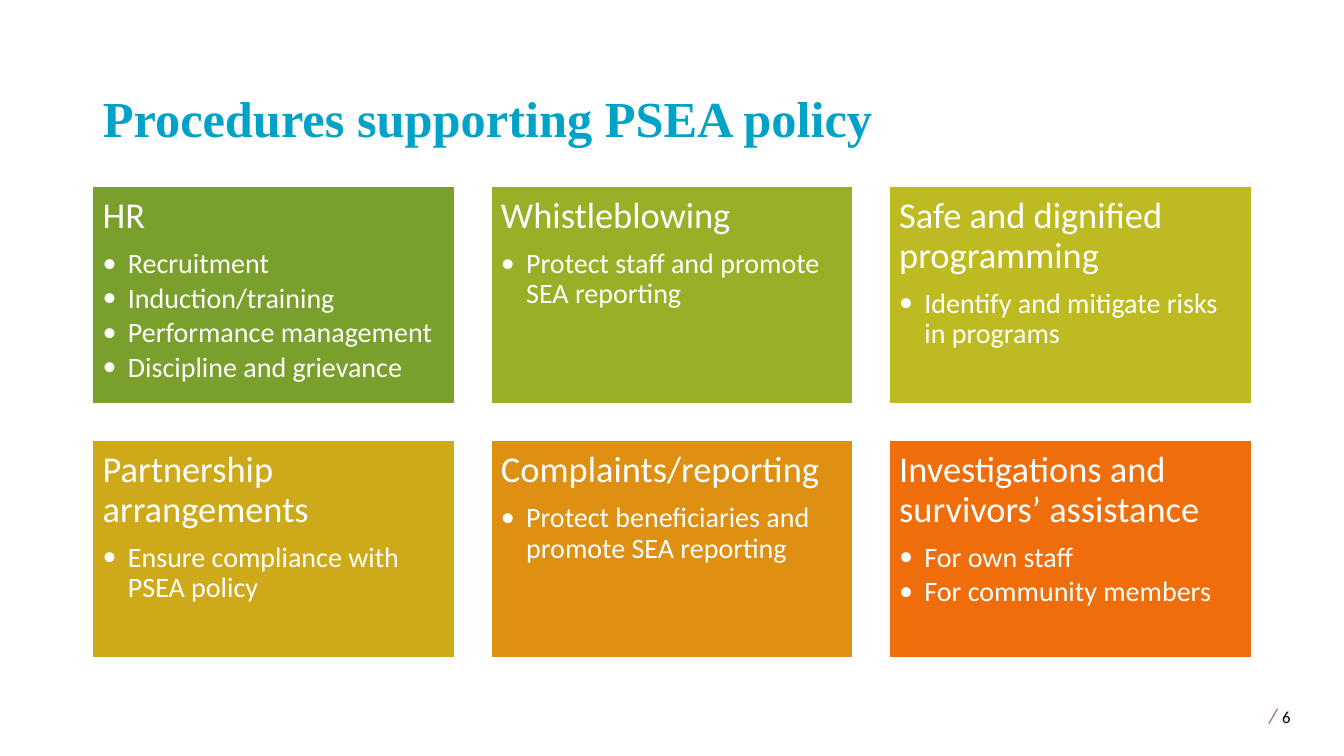
from lxml import etree
from pptx import Presentation
from pptx.dml.color import RGBColor
from pptx.enum.shapes import MSO_SHAPE
from pptx.enum.text import MSO_ANCHOR, MSO_AUTO_SIZE, PP_ALIGN
from pptx.oxml.ns import qn
from pptx.util import Inches, Pt

RECT = MSO_SHAPE.RECTANGLE
TOP, BOTTOM = MSO_ANCHOR.TOP, MSO_ANCHOR.BOTTOM
LEFT = PP_ALIGN.LEFT
NO_FIT = MSO_AUTO_SIZE.NONE

WHITE = RGBColor(0xFF, 0xFF, 0xFF)
BLACK = RGBColor(0, 0, 0)
TEAL = RGBColor(0x00, 0xA2, 0xC7)
PURPLE = RGBColor(0x90, 0x53, 0xA1)

TITLE = "Procedures supporting PSEA policy"
CARDS = [
    ("HR", RGBColor(0x79, 0xA0, 0x2C),
     ["Recruitment", "Induction/training", "Performance management",
      "Discipline and grievance"]),
    ("Whistleblowing", RGBColor(0x99, 0xAF, 0x27),
     ["Protect staff and promote SEA reporting"]),
    ("Safe and dignified programming", RGBColor(0xBE, 0xBA, 0x21),
     ["Identify and mitigate risks in programs"]),
    ("Partnership arrangements", RGBColor(0xCE, 0xA9, 0x1A),
     ["Ensure compliance with PSEA policy"]),
    ("Complaints/reporting", RGBColor(0xDE, 0x90, 0x13),
     ["Protect beneficiaries and promote SEA reporting"]),
    ("Investigations and survivors’ assistance", RGBColor(0xEF, 0x6E, 0x0B),
     ["For own staff", "For community members"]),
]
FOOTER = [("/ ", 15, PURPLE, True), ("6", 12, BLACK, False)]

WIDTH, HEIGHT = 13.33, 7.5
COLS = 3
MARGIN, CARD_TOP = 0.92, 1.85
CARD_W, CARD_H, GAP = 3.59, 2.16, 0.36
GRID_W = WIDTH - 2 * MARGIN
STEP_X = (GRID_W - CARD_W) / (COLS - 1)
STEP_Y = CARD_H + GAP
SIDE, INSET = Inches(0.1), Inches(0.11)
INDENT = Inches(0.25)


def box(*sides):
    return [Inches(side) for side in sides]


def add_run(para, text, size, color, font="Calibri", bold=False, italic=False):
    run = para.add_run()
    run.text = text
    face = run.font
    face.name, face.size = font, Pt(size)
    face.bold, face.italic = bold, italic
    face.color.rgb = color


def set_bullet(para):
    props = para._p.get_or_add_pPr()
    props.set("marL", str(INDENT))
    props.set("indent", str(-INDENT))
    etree.SubElement(props, qn("a:buFont")).set("typeface", "Calibri")
    etree.SubElement(props, qn("a:buChar")).set("char", "•")


def add_line(para, text, size, after):
    para.alignment = LEFT
    para.line_spacing = 0.9
    para.space_after = Pt(after)
    add_run(para, text, size, WHITE)


def add_card(slide, index, head, color, items):
    row, col = divmod(index, COLS)
    card = slide.shapes.add_shape(RECT, *box(
        MARGIN + col * STEP_X, CARD_TOP + row * STEP_Y, CARD_W, CARD_H))
    card.shadow.inherit = False
    card.fill.solid()
    card.fill.fore_color.rgb = color
    card.line.color.rgb = WHITE
    card.line.width = Pt(1)
    frame = card.text_frame
    frame.word_wrap = True
    frame.vertical_anchor = TOP
    frame.margin_left = frame.margin_right = SIDE
    frame.margin_top = frame.margin_bottom = INSET
    add_line(frame.paragraphs[0], head, 26, 9.1)
    for item in items:
        para = frame.add_paragraph()
        para.level = 1
        add_line(para, item, 20, 3)
        set_bullet(para)


def add_title(slide):
    title = slide.shapes.title
    title.left, title.top, title.width, title.height = box(
        MARGIN, 0.39, GRID_W, 1.13)
    frame = title.text_frame
    frame.word_wrap = True
    frame.auto_size = NO_FIT
    frame.vertical_anchor = BOTTOM
    para = frame.paragraphs[0]
    para.alignment = LEFT
    para.line_spacing = 0.9
    add_run(para, TITLE, 36, TEAL, "Times New Roman", bold=True)


def add_footer(slide):
    note = slide.shapes.add_textbox(*box(12.49, 6.92, 0.8, 0.36))
    frame = note.text_frame
    frame.word_wrap = True
    for text, size, color, italic in FOOTER:
        add_run(frame.paragraphs[0], text, size, color, italic=italic)


def main():
    deck = Presentation()
    deck.slide_width, deck.slide_height = box(WIDTH, HEIGHT)
    slide = deck.slides.add_slide(deck.slide_layouts.get_by_name("Title Only"))
    add_title(slide)
    for index, card in enumerate(CARDS):
        add_card(slide, index, *card)
    add_footer(slide)
    deck.save("out.pptx")


if __name__ == "__main__":
    main()
